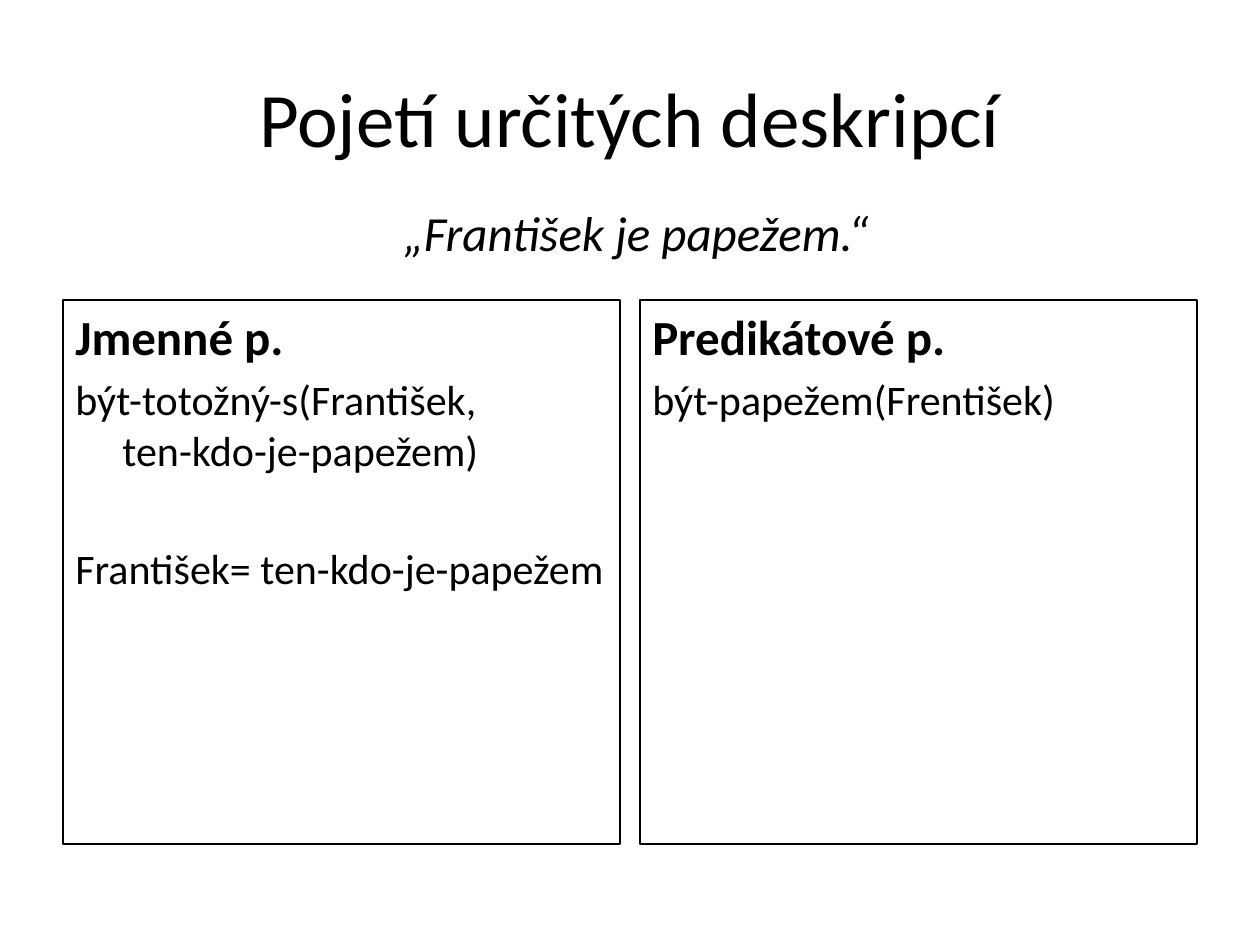
from pptx import Presentation
from pptx.dml.color import RGBColor
from pptx.enum.shapes import MSO_SHAPE
from pptx.enum.text import MSO_ANCHOR, PP_ALIGN
from pptx.util import Cm, Pt

RECTANGLE = MSO_SHAPE.RECTANGLE
TOP, MIDDLE, BOTTOM = MSO_ANCHOR.TOP, MSO_ANCHOR.MIDDLE, MSO_ANCHOR.BOTTOM
LEFT, CENTER = PP_ALIGN.LEFT, PP_ALIGN.CENTER
BLACK = RGBColor(0, 0, 0)

TITLE = "Pojetí určitých deskripcí"
EXAMPLE = "„František je papežem.“"
COLUMNS = [
    ("Jmenné p.", [
        ("být-totožný-s(František,\vten-kdo-je-papežem)", 5),
        ("František= ten-kdo-je-papežem", 38.5),
    ]),
    ("Predikátové p.", [("být-papežem(Frentišek)", 5)]),
]

MARGIN, COLUMN_TOP = Cm(1.27), Cm(6.05)
COLUMN_WIDTH, COLUMN_HEIGHT, GAP = Cm(11.23), Cm(10.97), Cm(0.4)
HANGING = Cm(0.95)

TITLE_FONT = {"size": Pt(44)}
EXAMPLE_FONT = {"size": Pt(28), "italic": True}
HEADING_FONT = {"size": Pt(28), "bold": True}
BODY_FONT = {"size": Pt(24), "bold": False}


def write(paragraph, text, font_format, alignment, space_before=0):
    paragraph.text = text
    paragraph.alignment = alignment
    paragraph.space_before = Pt(space_before)
    for run in paragraph.runs:
        for name, value in font_format.items():
            setattr(run.font, name, value)
        run.font.name = "Calibri"
        run.font.color.rgb = BLACK


def prepare(shape, anchor):
    frame = shape.text_frame
    frame.word_wrap = True
    frame.vertical_anchor = anchor
    return frame


def add_column(slide, left, heading, lines):
    box = slide.shapes.add_shape(RECTANGLE, left, COLUMN_TOP, COLUMN_WIDTH, COLUMN_HEIGHT)
    box.shadow.inherit = False
    box.fill.background()
    box.line.color.rgb = BLACK
    box.line.width = Pt(1)
    frame = prepare(box, TOP)
    write(frame.paragraphs[0], heading, HEADING_FONT, LEFT)
    for text, space_before in lines:
        write(frame.add_paragraph(), text, BODY_FONT, LEFT, space_before)
    for paragraph in frame.paragraphs:
        properties = paragraph._p.get_or_add_pPr()
        properties.set("marL", str(HANGING))
        properties.set("indent", str(-HANGING))


def main():
    presentation = Presentation()
    presentation.slide_width, presentation.slide_height = Cm(25.4), Cm(19.05)
    slide = presentation.slides.add_slide(presentation.slide_layouts[5])

    title = slide.shapes.title
    title.left, title.top, title.width, title.height = MARGIN, Cm(0.76), Cm(22.86), Cm(3.18)
    write(prepare(title, MIDDLE).paragraphs[0], TITLE, TITLE_FONT, CENTER)

    example = slide.shapes.add_textbox(Cm(1.3), Cm(3.94), Cm(23.04), Cm(1.45))
    write(prepare(example, BOTTOM).paragraphs[0], EXAMPLE, EXAMPLE_FONT, CENTER)

    for index, (heading, lines) in enumerate(COLUMNS):
        add_column(slide, MARGIN + index * (COLUMN_WIDTH + GAP), heading, lines)

    presentation.save("out.pptx")


if __name__ == "__main__":
    main()
